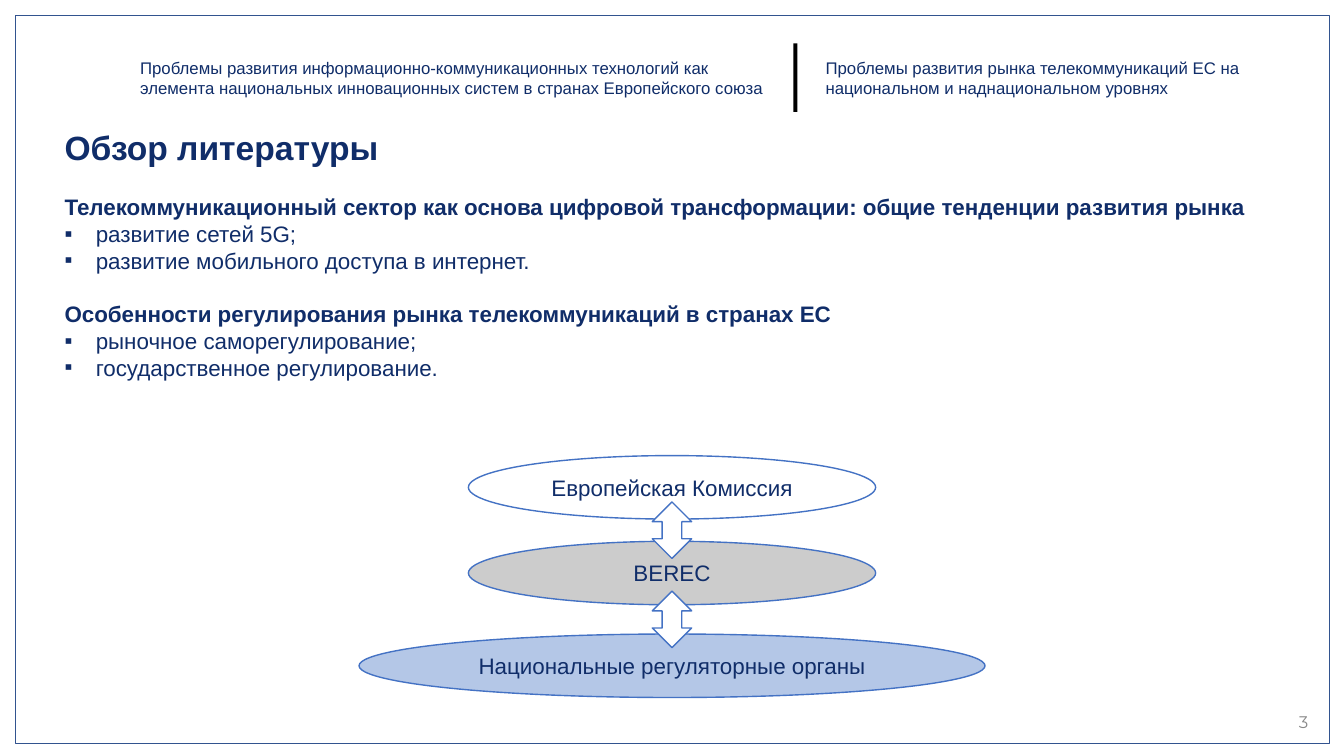
import pptx
import pptx.dml.color
import pptx.enum.shapes
import pptx.enum.text
import pptx.util
from lxml import etree

SHAPE = pptx.enum.shapes.MSO_SHAPE
ALIGN = pptx.enum.text.PP_ALIGN
ANCHOR = pptx.enum.text.MSO_ANCHOR
WIDTH, HEIGHT = pptx.util.Inches(13.33), pptx.util.Inches(7.5)
INSET = pptx.util.Inches(0.05)
NAVY, BLUE, WHITE = "102D69", "4472C4", "FFFFFF"
BODY_LINE = pptx.util.Pt(19.1)

HEADERS = [
    (10.05, 48.08, "Проблемы развития информационно-коммуникационных технологий как "
     "элемента национальных инновационных систем в странах Европейского союза"),
    (61.05, 34.43, "Проблемы развития рынка телекоммуникаций ЕС на "
     "национальном и наднациональном уровнях"),
]
REVIEW = [
    ("Телекоммуникационный сектор как основа цифровой трансформации: общие тенденции развития рынка",
     ["развитие сетей 5G;", "развитие мобильного доступа в интернет."]),
    ("Особенности регулирования рынка телекоммуникаций в странах ЕС",
     ["рыночное саморегулирование;", "государственное регулирование."]),
]
# Regulator, top and width as percentages of the slide, fill
REGULATORS = [
    ("Европейская Комиссия", 60.27, 30.3, None),
    ("BEREC", 71.6, 30.3, "CCCCCC"),
    ("Национальные регуляторные органы", 83.87, 46.58, "B4C7E7"),
]
REGULATOR_HEIGHT = 8.4
ARROW_WIDTH, ARROW_HEIGHT = 2.93, 7.47


def rgb(colour):
    return pptx.dml.color.RGBColor.from_string(colour)


def area(left, top, width, height):
    """Turn percentages of the slide into lengths."""
    return [round(share * side / 100) for share, side in
            zip((left, top, width, height), (WIDTH, HEIGHT) * 2)]


def apply(target, **values):
    for name, value in values.items():
        setattr(target, name, value)


def set_up_frame(frame, **values):
    margins = {f"margin_{side}": INSET for side in ("left", "top", "right", "bottom")}
    settings = {"word_wrap": True, "vertical_anchor": ANCHOR.TOP, **margins, **values}
    apply(frame, **settings)


def write(paragraph, text, size, colour=NAVY, bold=False, font="Arial", align=ALIGN.LEFT):
    paragraph.text = text
    paragraph.alignment = align
    apply(paragraph.font, size=pptx.util.Pt(size), bold=bold, name=font)
    paragraph.font.color.rgb = rgb(colour)


def add_label(slide, place, text, size, frame=None, **style):
    label = slide.shapes.add_textbox(*area(*place)).text_frame
    set_up_frame(label, **(frame or {}))
    write(label.paragraphs[0], text, size, **style)


def add_figure(slide, kind, place, fill=None, line=None, weight=1):
    figure = slide.shapes.add_shape(kind, *area(*place))
    figure.shadow.inherit = False
    if fill:
        figure.fill.solid()
        figure.fill.fore_color.rgb = rgb(fill)
    else:
        figure.fill.background()
    if line:
        figure.line.color.rgb = rgb(line)
        figure.line.width = pptx.util.Pt(weight)
    else:
        figure.line.fill.background()
    return figure


def add_bullet(paragraph):
    properties = paragraph._p.get_or_add_pPr()
    indent = pptx.util.Inches(0.31)
    properties.set("marL", str(indent))
    properties.set("indent", str(-indent))
    namespace = properties.nsmap["a"]
    etree.SubElement(properties, f"{{{namespace}}}buFont", typeface="Arial")
    etree.SubElement(properties, f"{{{namespace}}}buChar", char="▪")


def add_title(slide, text):
    title = slide.shapes.title
    left, top, width, height = area(4.43, 16.13, 82.35, 6.67)
    apply(title, left=left, top=top, width=width, height=height)
    set_up_frame(title.text_frame)
    write(title.text_frame.paragraphs[0], text, 24, bold=True)
    title.text_frame.paragraphs[0].line_spacing = 1.0


def add_review(slide):
    review = slide.shapes.add_textbox(*area(4.43, 24.93, 91.05, 42)).text_frame
    set_up_frame(review)
    for section, (heading, points) in enumerate(REVIEW):
        opening = review.add_paragraph() if section else review.paragraphs[0]
        write(opening, heading, 16, bold=True)
        if section:
            opening.space_before = BODY_LINE
        for point in points:
            item = review.add_paragraph()
            add_bullet(item)
            write(item, point, 16)
    for paragraph in review.paragraphs:
        paragraph.line_spacing = BODY_LINE


def add_regulators(slide):
    """Stack the regulators and centre an arrow in each gap."""
    for name, top, width, fill in REGULATORS:
        regulator = add_figure(slide, SHAPE.OVAL,
                               (50 - width / 2, top, width, REGULATOR_HEIGHT), fill, BLUE)
        set_up_frame(regulator.text_frame, vertical_anchor=ANCHOR.MIDDLE)
        write(regulator.text_frame.paragraphs[0], name, 16, align=ALIGN.CENTER)
    for upper, lower in zip(REGULATORS, REGULATORS[1:]):
        middle = (upper[1] + REGULATOR_HEIGHT + lower[1]) / 2
        add_figure(slide, SHAPE.UP_DOWN_ARROW,
                   (50 - ARROW_WIDTH / 2, middle - ARROW_HEIGHT / 2, ARROW_WIDTH, ARROW_HEIGHT),
                   WHITE, BLUE)


def main():
    deck = pptx.Presentation()
    apply(deck, slide_width=WIDTH, slide_height=HEIGHT)
    slide = deck.slides.add_slide(deck.slide_layouts.get_by_name("Title Only"))
    add_figure(slide, SHAPE.RECTANGLE, (1.1, 2, 97.8, 96.27), line="32538F", weight=0.25)
    for left, width, topic in HEADERS:
        add_label(slide, (left, 6.93, width, 6.67), topic, 12)
    add_figure(slide, SHAPE.RECTANGLE, (59.03, 5.73, 0.3, 9.07), "000000")
    add_title(slide, "Обзор литературы")
    add_review(slide)
    add_regulators(slide)
    add_label(slide, (95.48, 93.6, 2.25, 3.87), "3", 12,
              frame={"word_wrap": False, "vertical_anchor": ANCHOR.MIDDLE},
              colour="888888", font="Montserrat", align=ALIGN.RIGHT)
    deck.save("out.pptx")


if __name__ == "__main__":
    main()
